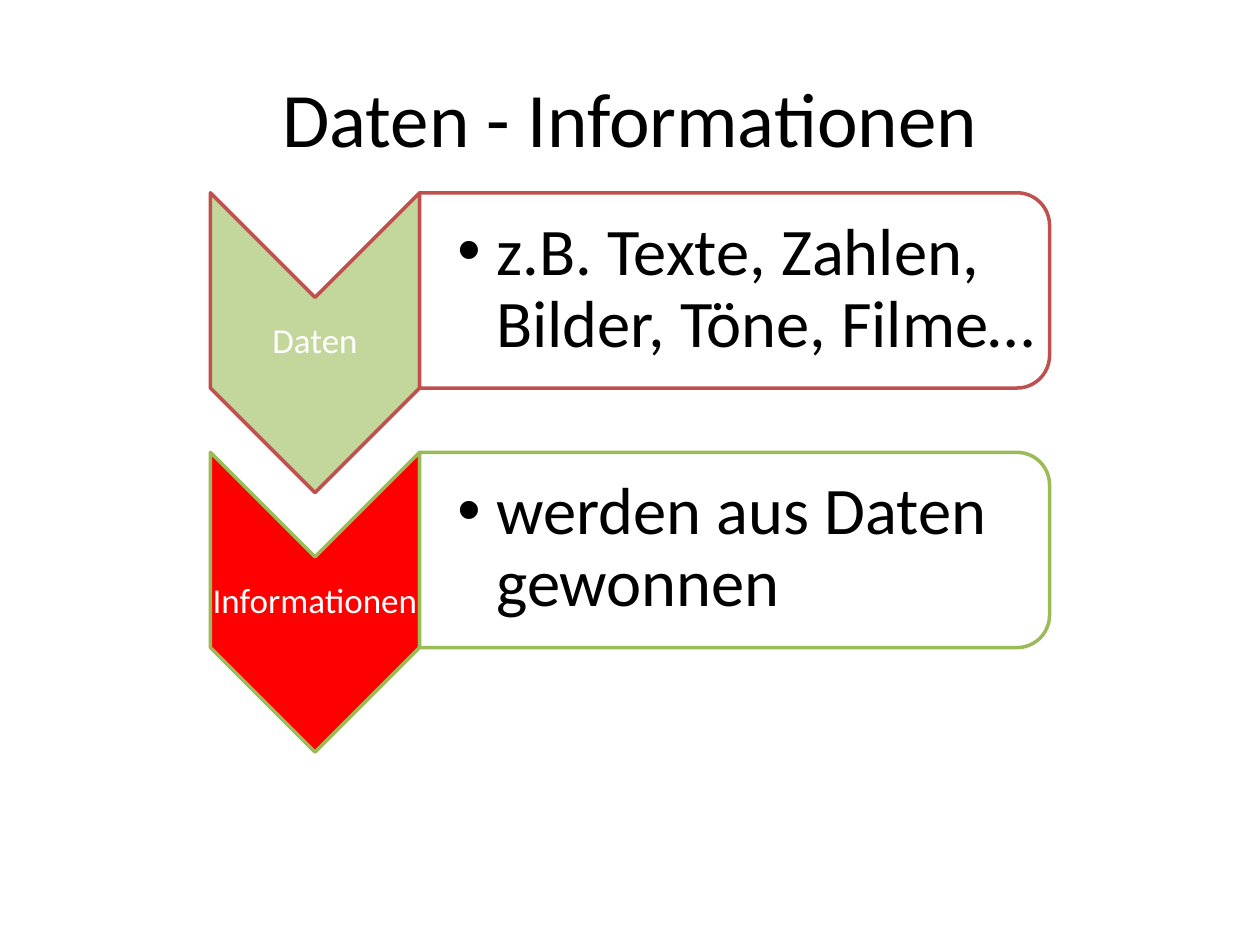
import lxml.etree
import pptx
import pptx.dml.color
import pptx.enum.shapes
import pptx.enum.text
import pptx.oxml.ns
import pptx.util

Inches = pptx.util.Inches
RGBColor = pptx.dml.color.RGBColor
Align = pptx.enum.text.PP_ALIGN
Shape = pptx.enum.shapes.MSO_SHAPE
qn = pptx.oxml.ns.qn

BLACK = RGBColor(0x00, 0x00, 0x00)
WHITE = RGBColor(0xFF, 0xFF, 0xFF)
RED = RGBColor(0xFF, 0x00, 0x00)
LIGHT_GREEN = RGBColor(0xC3, 0xD6, 0x9B)
BRICK = RGBColor(0xC0, 0x50, 0x4D)
GREEN = RGBColor(0x9B, 0xBB, 0x59)

FONT = "Calibri"
LEFT = 1.67
CHEVRON_WIDTH, CHEVRON_HEIGHT = 1.66, 2.38
PANEL_WIDTH, PANEL_HEIGHT = 5, 1.55
FIRST_TOP, ROW_PITCH = 1.53, 2.06

# Label, explanation, chevron fill, outline colour
ROWS = [
    ("Daten", "z.B. Texte, Zahlen, Bilder, Töne, Filme…", LIGHT_GREEN, BRICK),
    ("Informationen", "werden aus Daten gewonnen", RED, GREEN),
]


def write_text(shape, text, size, color, align=Align.CENTER, spacing=None):
    """Put one formatted paragraph into a shape and return the paragraph."""
    frame = shape.text_frame
    frame.word_wrap = True
    frame.vertical_anchor = pptx.enum.text.MSO_ANCHOR.MIDDLE
    paragraph = frame.paragraphs[0]
    paragraph.alignment = align
    paragraph.line_spacing = spacing
    run = paragraph.add_run()
    run.text = text
    run.font.name = FONT
    run.font.size = pptx.util.Pt(size)
    run.font.color.rgb = color
    return paragraph


def set_margins(shape, left, other):
    frame = shape.text_frame
    frame.margin_left = Inches(left)
    frame.margin_top = frame.margin_right = frame.margin_bottom = Inches(other)


def add_bullet(paragraph, indent):
    properties = paragraph._p.get_or_add_pPr()
    properties.set("marL", str(Inches(indent)))
    properties.set("indent", str(-Inches(indent)))
    lxml.etree.SubElement(properties, qn("a:buFont"), typeface="Arial")
    lxml.etree.SubElement(properties, qn("a:buChar"), char="•")


def add_turned_shape(slide, kind, left, top, width, height, fill, line):
    """Add a shape turned by 90 degrees that covers the given visible area."""
    shift = (width - height) / 2
    shape = slide.shapes.add_shape(
        kind, Inches(left + shift), Inches(top - shift), Inches(height), Inches(width))
    shape.rotation = 90
    shape.shadow.inherit = False
    shape.fill.solid()
    shape.fill.fore_color.rgb = fill
    shape.line.color.rgb = line
    shape.line.width = pptx.util.Pt(2)
    return shape


def add_row(slide, top, label, explanation, fill, line):
    panel_left = LEFT + CHEVRON_WIDTH

    # Chevron with its label
    add_turned_shape(slide, Shape.CHEVRON, LEFT, top,
                     CHEVRON_WIDTH, CHEVRON_HEIGHT, fill, line)
    label_box = slide.shapes.add_textbox(
        Inches(LEFT), Inches(top + CHEVRON_WIDTH / 2), Inches(CHEVRON_WIDTH), Inches(0.71))
    set_margins(label_box, 0.01, 0.01)
    write_text(label_box, label, 20, WHITE, spacing=0.9)

    # Slightly transparent panel with its bullet
    panel = add_turned_shape(slide, Shape.ROUND_2_SAME_RECTANGLE, panel_left, top,
                             PANEL_WIDTH, PANEL_HEIGHT, WHITE, line)
    panel_color = panel._element.spPr.find(qn("a:solidFill"))[0]
    lxml.etree.SubElement(panel_color, qn("a:alpha"), val="90000")
    bullet_box = slide.shapes.add_textbox(
        Inches(panel_left), Inches(top + 0.07), Inches(4.93), Inches(1.4))
    set_margins(bullet_box, 0.3, 0.03)
    paragraph = write_text(bullet_box, explanation, 38, BLACK, align=Align.LEFT, spacing=0.9)
    add_bullet(paragraph, 0.31)


def main():
    presentation = pptx.Presentation()
    presentation.slide_width = Inches(10)
    presentation.slide_height = Inches(7.5)
    slide = presentation.slides.add_slide(presentation.slide_layouts[5])

    # Title
    title = slide.shapes.title
    title.left, title.top = Inches(0.5), Inches(0.3)
    title.width, title.height = Inches(9), Inches(1.25)
    write_text(title, "Daten - Informationen", 44, BLACK)

    # Chevron list
    for index, row in enumerate(ROWS):
        add_row(slide, FIRST_TOP + index * ROW_PITCH, *row)

    presentation.save("out.pptx")


if __name__ == "__main__":
    main()
